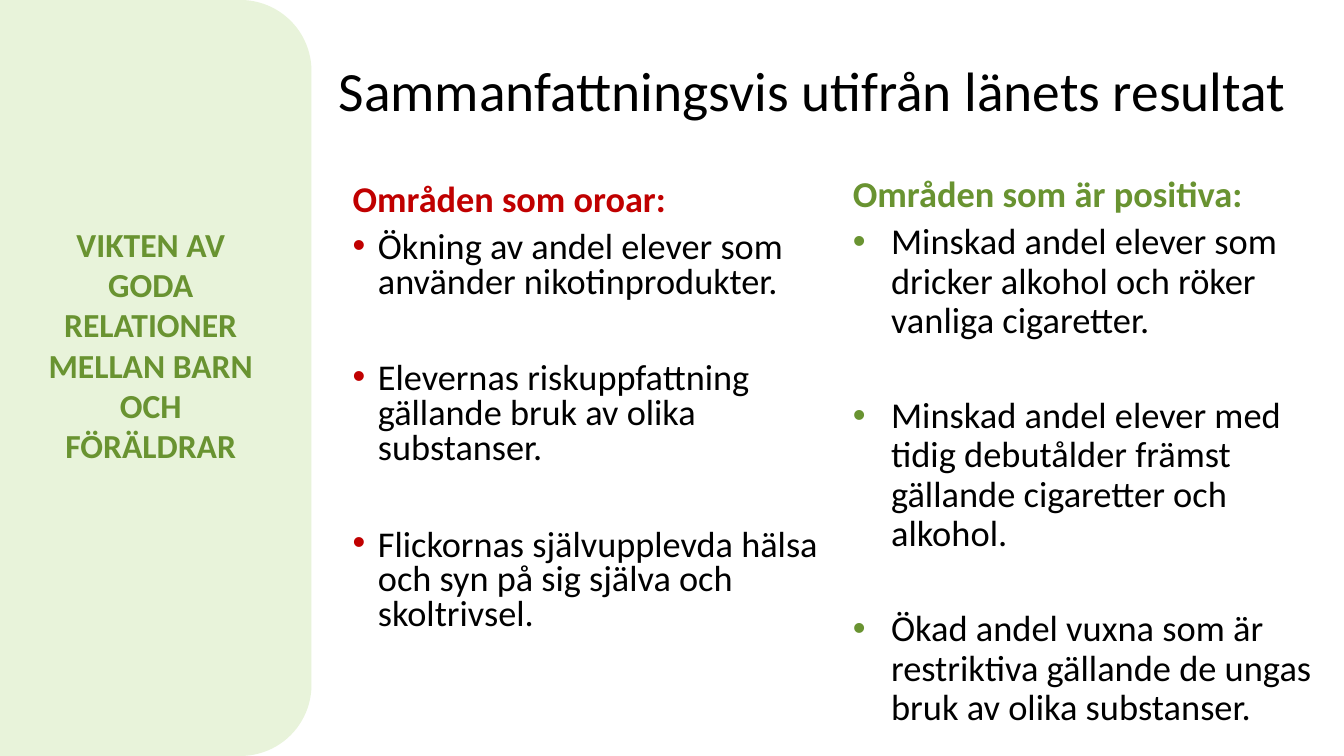
import pptx
import pptx.util
import pptx.dml.color
import pptx.enum.shapes
import pptx.enum.text
import lxml.etree

Inches = pptx.util.Inches
Pt = pptx.util.Pt
ALIGN = pptx.enum.text.PP_ALIGN
ANCHOR = pptx.enum.text.MSO_ANCHOR

RED, GREEN, PALE_GREEN, BLACK, WHITE = "C00000", "699331", "E8F3DA", "000000", "FFFFFF"


def color(hex_string):
    return pptx.dml.color.RGBColor.from_string(hex_string)


def write(frame, text, size=26, fill=BLACK, bold=False, align=ALIGN.LEFT,
          line=1.0, before=0, bullet=None, indent=0):
    """Add a paragraph, using the empty first one if the frame has no text."""
    paragraph = frame.add_paragraph() if frame.text else frame.paragraphs[0]
    paragraph.alignment = align
    paragraph.line_spacing = line
    paragraph.space_before = Pt(before)
    run = paragraph.add_run()
    run.text = text
    run.font.name = "Calibri"
    run.font.size = Pt(size)
    run.font.bold = bold
    run.font.color.rgb = color(fill)
    if bullet:
        properties = paragraph._p.get_or_add_pPr()
        properties.set("marL", str(Inches(indent)))
        properties.set("indent", str(-Inches(indent)))
        namespace = pptx.oxml.ns.nsdecls("a")
        for xml in (f'<a:buClr {namespace}><a:srgbClr val="{bullet}"/></a:buClr>',
                    f'<a:buFont {namespace} typeface="Arial"/>',
                    f'<a:buChar {namespace} char="•"/>'):
            properties.append(pptx.oxml.parse_xml(xml))


presentation = pptx.Presentation()
presentation.slide_width = Inches(13.33)
presentation.slide_height = Inches(7.5)
slide = presentation.slides.add_slide(presentation.slide_layouts[6])

# Side panel and white field behind the right column
panels = [
    (pptx.enum.shapes.MSO_SHAPE.ROUNDED_RECTANGLE, (-1.14, 0, 4.23, 7.5), PALE_GREEN),
    (pptx.enum.shapes.MSO_SHAPE.RECTANGLE, (8.36, 1.65, 4.83, 5.68), WHITE),
]
for kind, box, fill in panels:
    panel = slide.shapes.add_shape(kind, *map(Inches, box))
    panel.shadow.inherit = False
    panel.fill.solid()
    panel.fill.fore_color.rgb = color(fill)
    panel.line.fill.background()
positive_frame = panel.text_frame

# Text boxes: title, worrying areas, side text
frames = []
for box in [(3.26, 0.57, 9.65, 0.71), (3.4, 1.78, 4.83, 4.65), (0.28, 2.17, 2.43, 2.52)]:
    frames.append(slide.shapes.add_textbox(*map(Inches, box)).text_frame)
title_frame, worry_frame, side_frame = frames
for frame in frames + [positive_frame]:
    frame.word_wrap = True
    frame.vertical_anchor = ANCHOR.TOP
title_frame.vertical_anchor = ANCHOR.MIDDLE

write(title_frame, "Sammanfattningsvis utifrån länets resultat", size=39.6, line=0.9)
write(side_frame, "VIKTEN AV GODA RELATIONER MELLAN BARN OCH FÖRÄLDRAR",
      size=24, fill=GREEN, bold=True, align=ALIGN.CENTER)

# Two columns: heading, then bullets with a wide gap between them
columns = [
    (worry_frame, "Områden som oroar:", RED,
     dict(size=25.9, line=0.8), 0.25, 9, 44,
     ["Ökning av andel elever som använder nikotinprodukter.",
      "Elevernas riskuppfattning gällande bruk av olika substanser.",
      "Flickornas självupplevda hälsa och syn på sig själva och skoltrivsel."]),
    (positive_frame, "Områden som är positiva:", GREEN,
     dict(size=26, line=0.9), 0.38, 6, 40,
     ["Minskad andel elever som dricker alkohol och röker vanliga cigaretter.",
      "Minskad andel elever med tidig debutålder främst gällande cigaretter och alkohol.",
      "Ökad andel vuxna som är restriktiva gällande de ungas bruk av olika substanser."]),
]
for frame, heading, accent, style, indent, first_gap, gap, bullets in columns:
    heading_style = style if frame is worry_frame else dict(style, line=1.0)
    write(frame, heading, fill=accent, bold=True, **heading_style)
    for index, text in enumerate(bullets):
        write(frame, text, before=gap if index else first_gap,
              bullet=accent, indent=indent, **style)

presentation.save("out.pptx")
